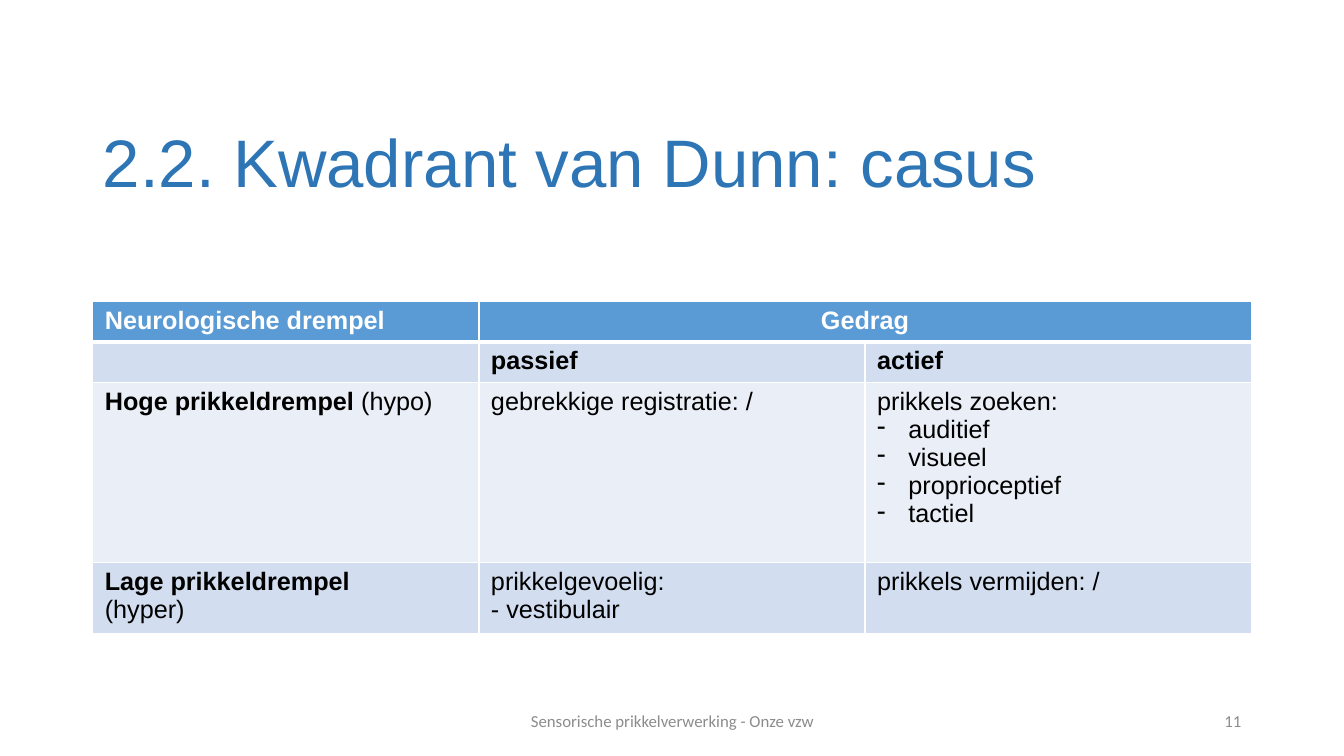
import pptx
import pptx.util
import pptx.dml.color
import pptx.enum.text
import pptx.oxml
import pptx.oxml.ns

RGBColor = pptx.dml.color.RGBColor
BLUE = RGBColor(0x2E, 0x75, 0xB6)
HEAD = RGBColor(0x5B, 0x9B, 0xD5)
DARK = RGBColor(0xD2, 0xDE, 0xEF)
PALE = RGBColor(0xEA, 0xEF, 0xF7)
GREY = RGBColor(0x8C, 0x8C, 0x8C)
WHITE = RGBColor(0xFF, 0xFF, 0xFF)
BLACK = RGBColor(0, 0, 0)
ALIGN = pptx.enum.text.PP_ALIGN
MIDDLE = pptx.enum.text.MSO_ANCHOR.MIDDLE
Inches = pptx.util.Inches

deck = pptx.Presentation()
deck.slide_width = Inches(13.33)
deck.slide_height = Inches(7.5)
slide = deck.slides.add_slide(deck.slide_layouts[6])

# Grid: three equal columns between the side margins
LEFT, COL = 0.92, 3.83
WIDE = 3 * COL


def style(run, size, face, color, bold=False):
    run.font.size = pptx.util.Pt(size)
    run.font.name = face
    run.font.color.rgb = color
    run.font.bold = bold


# Title, footer and slide number
FOOT, BAR = 6.95, 0.4
labels = [
    ("2.2. Kwadrant van Dunn: casus", LEFT, 0.87, WIDE, 1.45,
     ALIGN.LEFT, 48, "Arial", BLUE),
    ("Sensorische prikkelverwerking - Onze vzw", 4.42, FOOT, 4.5, BAR,
     ALIGN.CENTER, 12, "Calibri", GREY),
    ("11", LEFT + WIDE - 3, FOOT, 3, BAR, ALIGN.RIGHT, 12, "Calibri", GREY),
]
for text, x, y, w, h, align, size, face, color in labels:
    box = slide.shapes.add_textbox(Inches(x), Inches(y), Inches(w), Inches(h))
    frame = box.text_frame
    frame.word_wrap = True
    frame.vertical_anchor = MIDDLE
    frame.text = text
    para = frame.paragraphs[0]
    para.alignment = align
    style(para.runs[0], size, face, color)

# Table content: each line is a bold part and a plain part
cells = [
    [[("Neurologische drempel", "")], [("Gedrag", "")], []],
    [[], [("passief", "")], [("actief", "")]],
    [[("Hoge prikkeldrempel ", "(hypo)")],
     [("", "gebrekkige registratie: /")],
     [("", "prikkels zoeken:"), ("", "auditief"), ("", "visueel"),
      ("", "proprioceptief"), ("", "tactiel")]],
    [[("Lage prikkeldrempel", ""), ("", "(hyper)")],
     [("", "prikkelgevoelig:"), ("", "- vestibulair")],
     [("", "prikkels vermijden: /")]],
]
fills = [HEAD, DARK, PALE, DARK]
tall = [0.4, 0.4, 1.79, 0.65]
BULLETS = (2, 2)

table = slide.shapes.add_table(4, 3, Inches(LEFT), Inches(2.99),
                               Inches(WIDE), Inches(sum(tall))).table
table.first_row = table.horz_banding = False
for col in table.columns:
    col.width = Inches(COL)
for row, high in zip(table.rows, tall):
    row.height = Inches(high)
table.cell(0, 1).merge(table.cell(0, 2))

for r, line in enumerate(cells):
    for c, parts in enumerate(line):
        cell = table.cell(r, c)
        cell.margin_left = cell.margin_right = Inches(0.12)
        cell.margin_top = cell.margin_bottom = Inches(0.05)
        cell.fill.solid()
        cell.fill.fore_color.rgb = fills[r]

        # White borders, thicker below the header row
        props = cell._tc.get_or_add_tcPr()
        for n, side in enumerate("LRTB"):
            thick = 3 if (r, side) in [(0, "B"), (1, "T")] else 1
            props.insert(n, pptx.oxml.parse_xml(
                f'<a:ln{side} {pptx.oxml.ns.nsdecls("a")} w="{thick * 12700}">'
                f'<a:solidFill><a:srgbClr val="{WHITE}"/></a:solidFill>'
                f'</a:ln{side}>'))

        # Text with dash bullets in the list of stimuli
        frame = cell.text_frame
        for n, pair in enumerate(parts):
            para = frame.add_paragraph() if n else frame.paragraphs[0]
            if (r, c) == (0, 1):
                para.alignment = ALIGN.CENTER
            if (r, c) == BULLETS and n:
                form = para._p.get_or_add_pPr()
                form.set("marL", str(Inches(0.31)))
                form.set("indent", str(-Inches(0.31)))
                form.append(pptx.oxml.parse_xml(
                    f'<a:buChar {pptx.oxml.ns.nsdecls("a")} char="-"/>'))
            for text, bold in zip(pair, (True, False)):
                if text:
                    run = para.add_run()
                    run.text = text
                    style(run, 18, "Arial", BLACK if r else WHITE, bold)

deck.save("out.pptx")
